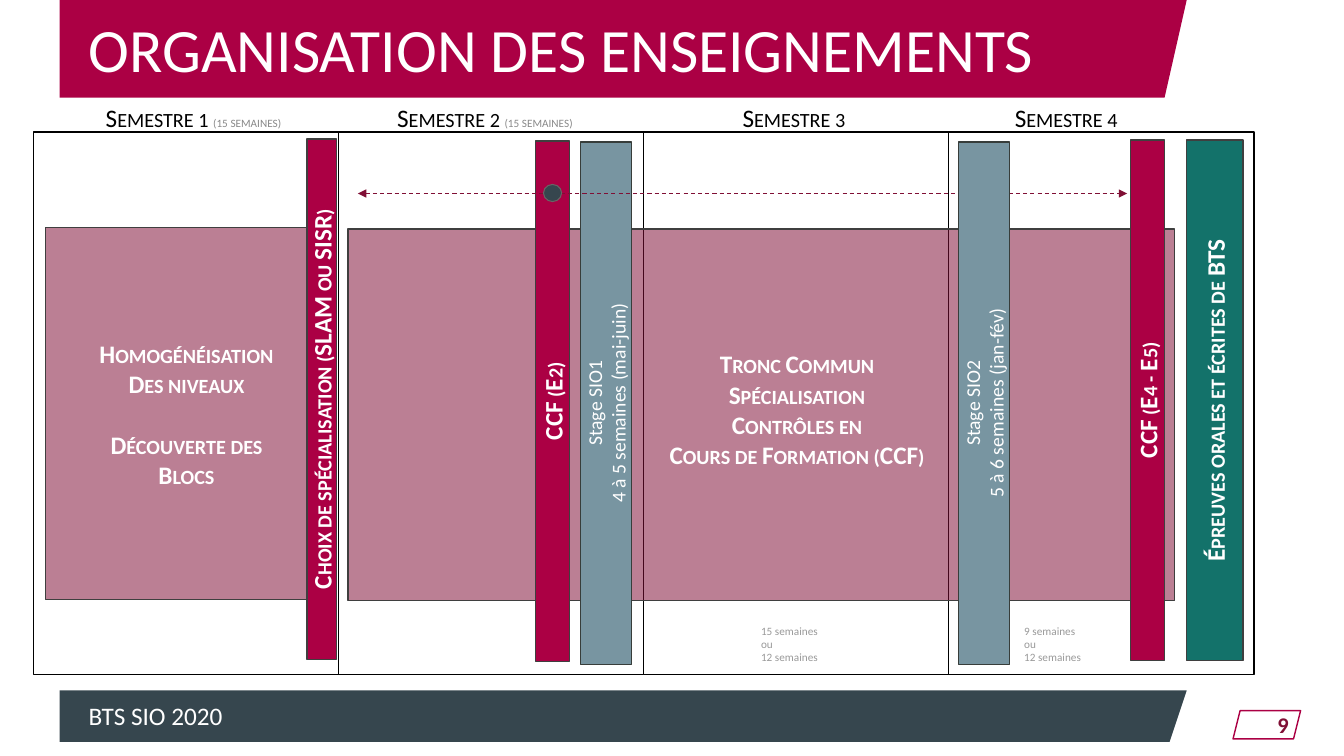
from pptx import Presentation
from pptx.dml.color import RGBColor
from pptx.enum.dml import MSO_LINE
from pptx.enum.shapes import MSO_CONNECTOR, MSO_SHAPE
from pptx.enum.text import MSO_ANCHOR, MSO_AUTO_SIZE, PP_ALIGN
from pptx.oxml.ns import qn
from pptx.util import Pt
from lxml import etree

PX = 9144
FONT = "Calibri"
COLORS = {
    "white": "FFFFFF", "black": "000000", "crimson": "AB0044", "wine": "800F35",
    "slate": "36464E", "steel": "7895A1", "teal": "13726A", "edge": "3F3F3F",
    "stage_edge": "373D3A", "dot_edge": "696464", "gray": "888888", "pale": "999999",
}
RECT, PARALLELOGRAM = MSO_SHAPE.RECTANGLE, MSO_SHAPE.PARALLELOGRAM
CIRCLE = MSO_SHAPE.FLOWCHART_CONNECTOR
LEFT, CENTER, RIGHT = PP_ALIGN.LEFT, PP_ALIGN.CENTER, PP_ALIGN.RIGHT
TOP, MIDDLE = MSO_ANCHOR.TOP, MSO_ANCHOR.MIDDLE
NO_FIT = MSO_AUTO_SIZE.NONE
STRAIGHT, DASH = MSO_CONNECTOR.STRAIGHT, MSO_LINE.DASH


def px(*values):
    return [round(v * PX) for v in values]


def rgb(name):
    return RGBColor.from_string(COLORS[name])


def add_run(p, text, size, color="white", bold=False, caps=False):
    r = p.add_run()
    r.text = text
    r.font.name = FONT
    r.font.size = Pt(size)
    r.font.bold = bold
    r.font.color.rgb = rgb(color)
    if caps:
        r.font._element.set("cap", "small")


def write(tf, lines, size, align=LEFT, anchor=TOP, inset=5, **style):
    tf.word_wrap = True
    tf.auto_size = NO_FIT
    tf.vertical_anchor = anchor
    tf.margin_left, tf.margin_right, tf.margin_top, tf.margin_bottom = px(10, 10, inset, inset)
    for i, line in enumerate(lines):
        p = tf.paragraphs[0] if i == 0 else tf.add_paragraph()
        p.alignment = align
        add_run(p, line, size, **style)


def add_label(s, box, lines, size, **style):
    tf = s.shapes.add_textbox(*px(*box)).text_frame
    write(tf, lines, size, **style)
    return tf


def paint(sp, fill, line=None, weight=1, alpha=None):
    sp.shadow.inherit = False
    if fill:
        sp.fill.solid()
        sp.fill.fore_color.rgb = rgb(fill)
    else:
        sp.fill.background()
    if alpha:
        color = sp._element.spPr.find(qn("a:solidFill")).find(qn("a:srgbClr"))
        etree.SubElement(color, qn("a:alpha")).set("val", str(alpha * 1000))
    if line:
        sp.line.color.rgb = rgb(line)
        sp.line.width = Pt(weight)
    else:
        sp.line.fill.background()


def add_block(s, kind, box, fill, line, **look):
    sp = s.shapes.add_shape(kind, *px(*box))
    paint(sp, fill, line, **look)
    return sp


def add_band(s, points, fill):
    fb = s.shapes.build_freeform(*points[0], scale=PX)
    fb.add_line_segments(points[1:], close=True)
    paint(fb.convert_to_shape(), fill)


def add_bar(s, cx, cy, length, thickness, fill, line, lines, size, **style):
    box = (cx - length / 2, cy - thickness / 2, length, thickness)
    sp = add_block(s, RECT, box, fill, line)
    sp.rotation = 270
    write(sp.text_frame, lines, size, align=CENTER, anchor=MIDDLE, **style)


def add_exam(s, cx, cy, thickness, text, fill="crimson"):
    add_bar(s, cx, cy, 516, thickness, fill, "edge", [text], 18, bold=True, caps=True)


def add_stage(s, cx, lines):
    add_bar(s, cx, 400, 518, 51, "steel", "stage_edge", lines, 14)


def add_span(s, x1, x2, y):
    c = s.shapes.add_connector(STRAIGHT, *px(x1, y, x2, y))
    c.line.color.rgb = rgb("wine")
    c.line.width = Pt(0.75)
    c.line.dash_style = DASH
    ln = c.line._get_or_add_ln()
    for end in ("a:headEnd", "a:tailEnd"):
        etree.SubElement(ln, qn(end)).set("type", "triangle")
    etree.SubElement(c._element.spPr, qn("a:effectLst"))


def add_frame(s):
    add_band(s, [(1160, 736), (59, 736), (59, 685), (1177, 685)], "slate")
    add_label(s, (78, 690, 1003, 41), ["BTS SIO 2020"], 18)
    add_band(s, [(1177, 0), (1155, 97), (59, 97), (59, 0)], "crimson")
    add_block(s, PARALLELOGRAM, (1223, 705, 67, 28), None, "crimson")
    title = s.shapes.title
    title.left, title.top, title.width, title.height = px(78, 8, 1063, 89)
    write(title.text_frame, ["ORGANISATION DES ENSEIGNEMENTS"], 44, anchor=MIDDLE)
    title.text_frame.paragraphs[0].line_spacing = 0.9
    s.shapes.element.append(title.element)
    add_label(s, (1205, 705, 83, 28), ["9"], 16, align=RIGHT, anchor=MIDDLE,
              color="wine", bold=True)


def add_semester_titles(s):
    titles = [(63, 258, "(15 semaines)"), (352, 258, "(15 semaines)"),
              (651, 273, ""), (915, 285, "")]
    for number, (x, width, weeks) in enumerate(titles, 1):
        name = f"Semestre {number}" + (" " if weeks else "")
        tf = add_label(s, (x, 97, width, 40), [name], 18, align=CENTER,
                       color="black", caps=True)
        if weeks:
            add_run(tf.paragraphs[0], weeks, 10, "gray", caps=True)


def main():
    prs = Presentation()
    prs.slide_width, prs.slide_height = px(1333, 750)
    s = prs.slides.add_slide(prs.slide_layouts[5])
    add_frame(s)

    for i in range(4):
        add_block(s, RECT, (round(33 + i * 302.67), 131, 303, 538), "white", "black")

    heading = {"align": CENTER, "bold": True, "caps": True}
    add_block(s, RECT, (345, 227, 820, 369), "wine", "edge", alpha=53)
    add_stage(s, 601, ["Stage SIO1", "4 à 5 semaines (mai-juin)"])
    add_exam(s, 1205, 397, 56, "Épreuves orales et écrites de BTS", "teal")
    add_exam(s, 548, 398, 34, "CCF (E2)")
    start = add_block(s, RECT, (45, 226, 280, 369), "wine", "edge", alpha=53)
    write(start.text_frame, ["Homogénéisation", "Des niveaux", "Découverte des", "Blocs"],
          18, anchor=MIDDLE, **heading)
    start.text_frame.paragraphs[2].space_before = Pt(22)
    add_exam(s, 319, 396, 29, "Choix de spécialisation (SLAM ou SISR)")
    add_exam(s, 1138, 397, 34, "CCF (E4 - E5)")
    add_span(s, 355, 1118, 192)
    add_block(s, CIRCLE, (539, 183, 18, 17), "slate", "dot_edge", weight=0.75)
    add_label(s, (640, 336, 301, 153),
              ["Tronc Commun", "Spécialisation", "Contrôles en", "Cours de Formation (CCF)"],
              18, inset=10, **heading)
    add_semester_titles(s)
    add_stage(s, 976, ["Stage SIO2", "5 à 6 semaines (jan-fév)"])

    for x, weeks in ((745, 15), (1006, 9)):
        add_label(s, (x, 609, 115, 56), [f"{weeks} semaines", "ou", "12 semaines"], 8,
                  inset=10, color="pale")

    prs.save("out.pptx")


if __name__ == "__main__":
    main()
